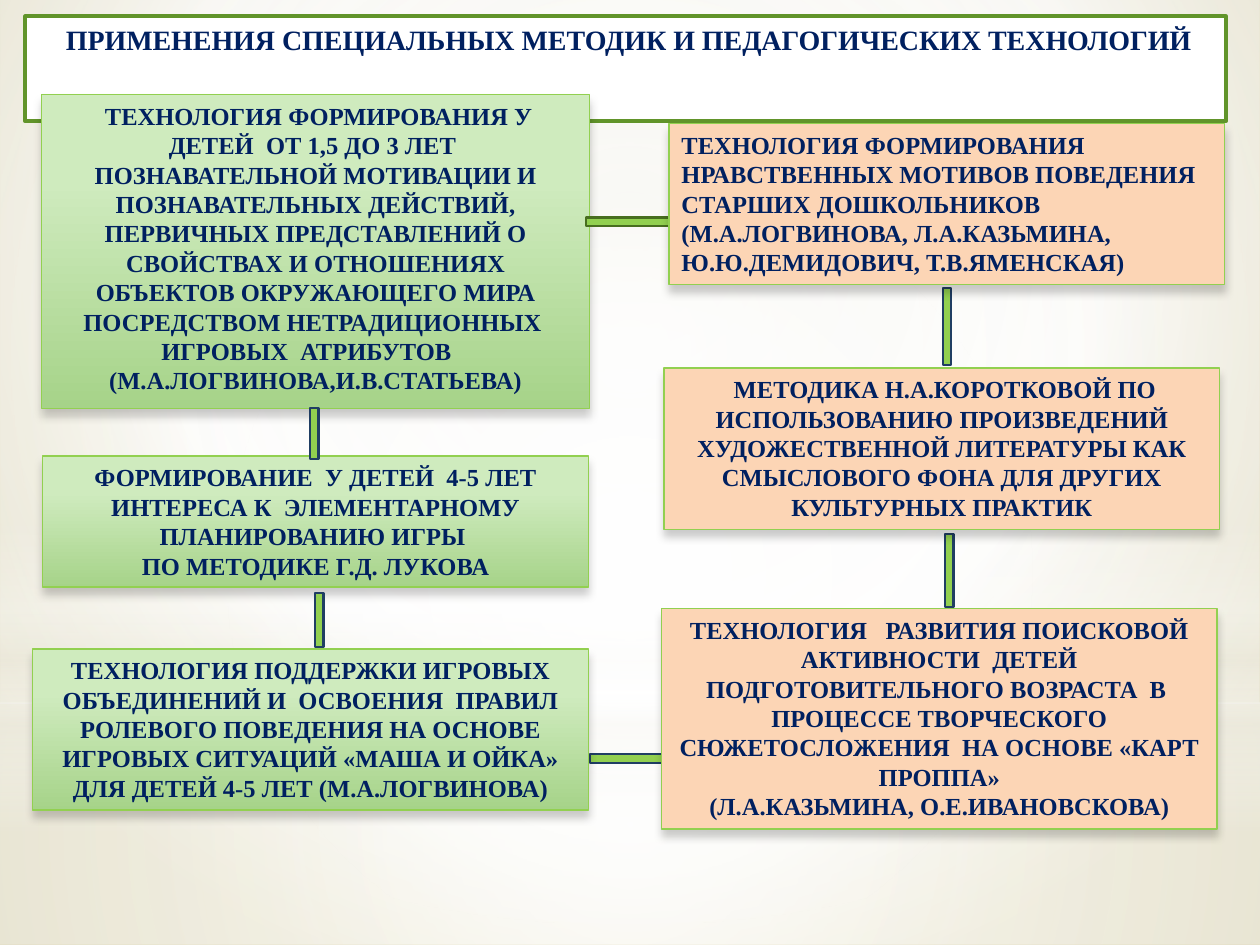
from lxml import etree
from pptx import Presentation
from pptx.dml.color import RGBColor
from pptx.enum import shapes, text
from pptx.oxml.ns import qn
from pptx.util import Inches, Pt

FONT = "Times New Roman"
NAVY = RGBColor(0x00, 0x20, 0x60)
WHITE = RGBColor(0xFF, 0xFF, 0xFF)
CREAM = RGBColor(0xEE, 0xEC, 0xE1)
SAND = RGBColor(0xE7, 0xE4, 0xD4)
KHAKI = RGBColor(0xD5, 0xCC, 0x9F)
LIME = RGBColor(0x92, 0xD0, 0x50)
PALE_GREEN = RGBColor(0xCF, 0xEB, 0xBE)
MID_GREEN = RGBColor(0xA6, 0xD3, 0x89)
PEACH = RGBColor(0xFC, 0xD5, 0xB5)
TITLE_GREEN = RGBColor(0x61, 0x94, 0x2A)
DARK_GREEN = RGBColor(0x48, 0x6E, 0x1F)
DARK_BLUE = RGBColor(0x20, 0x3E, 0x63)
BLACK = RGBColor(0, 0, 0)

CENTER, LEFT = text.PP_ALIGN.CENTER, text.PP_ALIGN.LEFT
RECT, OVAL = shapes.MSO_SHAPE.RECTANGLE, shapes.MSO_SHAPE.OVAL
MIDDLE = (50, 50, 50, 50)
GREEN_FADE = [(28, PALE_GREEN, 100), (100, MID_GREEN, 100)]


def sub(parent, tag, **attrs):
    return etree.SubElement(parent, qn(tag), {k: str(v) for k, v in attrs.items()})


def add_color(parent, color, opacity):
    clr = sub(parent, "a:srgbClr", val=color)
    if opacity < 100:
        sub(clr, "a:alpha", val=opacity * 1000)


def set_gradient(props, stops, focus=None):
    """Replace a solid fill by a radial (with focus) or downward gradient."""
    grad = etree.Element(qn("a:gradFill"), rotWithShape="1")
    gs_lst = sub(grad, "a:gsLst")
    for pos, color, opacity in stops:
        add_color(sub(gs_lst, "a:gs", pos=pos * 1000), color, opacity)
    if focus:
        path = sub(grad, "a:path", path="circle")
        sub(path, "a:fillToRect", **{k: v * 1000 for k, v in zip("ltrb", focus)})
    else:
        sub(grad, "a:lin", ang=5400000, scaled=0)
    props.replace(props.find(qn("a:solidFill")), grad)


def add_shape(s, kind, at, fill, line=None, width=0.75, focus=None):
    sp = s.shapes.add_shape(kind, *map(Inches, at))
    sp.shadow.inherit = False
    sp.fill.solid()
    if isinstance(fill, list):
        set_gradient(sp.element.spPr, fill, focus)
    else:
        sp.fill.fore_color.rgb = fill
    if line is None:
        sp.line.fill.background()
    else:
        sp.line.color.rgb = line
        sp.line.width = Pt(width)
    return sp


def format_run(r, size):
    r.font.name, r.font.size, r.font.bold = FONT, Pt(size), True
    r.font.color.rgb = NAVY


def add_box(s, at, fill, paragraphs, align=CENTER):
    sp = add_shape(s, RECT, at, fill, LIME)
    shadow = sub(sp.element.spPr.find(qn("a:effectLst")), "a:outerShdw",
                 blurRad=Pt(5), dist=Pt(4), dir=5400000, rotWithShape=0)
    add_color(shadow, BLACK, 20)
    tf = sp.text_frame
    tf.word_wrap = True
    tf.vertical_anchor = text.MSO_ANCHOR.TOP
    tf.auto_size = text.MSO_AUTO_SIZE.SHAPE_TO_FIT_TEXT
    tf.text = "\n".join(paragraphs)
    for p in tf.paragraphs:
        p.alignment = align
        for r in p.runs:
            format_run(r, 14)


def add_bar(s, at, line=DARK_BLUE, vertical=True):
    sp = add_shape(s, shapes.MSO_SHAPE.MATH_MINUS, at, LIME, line, 1.25)
    sp.rotation = 270 if vertical else 0


def add_backdrop(s):
    s.background.fill.solid()
    set_gradient(s.element.find(".//" + qn("p:bgPr")),
                 [(0, SAND, 100), (60, WHITE, 100), (100, KHAKI, 100)], (20, 10, 20, 60))
    add_shape(s, RECT, (0, 5.58, 10, 1.92),
              [(0, WHITE, 91), (37, WHITE, 76), (100, CREAM, 79)], focus=MIDDLE)
    add_shape(s, RECT, (0, 0, 10, 5.58),
              [(0, WHITE, 89), (48, WHITE, 62), (100, CREAM, 79)], focus=MIDDLE)
    add_shape(s, RECT, (0, 4.12, 10, 2.5),
              [(0, WHITE, 0), (29, WHITE, 30), (45, CREAM, 40),
               (55, WHITE, 26), (65, CREAM, 60), (100, WHITE, 0)])
    add_shape(s, OVAL, (0, 1.75, 10, 5.58), [(0, WHITE, 100), (56, WHITE, 0)], focus=MIDDLE)


def set_title(s, title):
    sp = s.shapes.title
    sp.left, sp.top, sp.width, sp.height = map(Inches, (0.2, 0.13, 9.53, 0.37))
    sp.fill.solid()
    sp.fill.fore_color.rgb = WHITE
    sp.line.color.rgb = TITLE_GREEN
    sp.line.width = Pt(2.25)
    tf = sp.text_frame
    tf.text = title
    tf.word_wrap = True
    tf.vertical_anchor = text.MSO_ANCHOR.TOP
    tf.auto_size = text.MSO_AUTO_SIZE.SHAPE_TO_FIT_TEXT
    p = tf.paragraphs[0]
    p.alignment = CENTER
    format_run(p.runs[0], 16)
    # Bring the title in front of the backdrop
    sp.element.getparent().append(sp.element)


def main():
    prs = Presentation()
    prs.slide_width, prs.slide_height = Inches(10), Inches(7.5)
    s = prs.slides.add_slide(prs.slide_layouts[5])
    add_backdrop(s)
    set_title(s, " ПРИМЕНЕНИЯ СПЕЦИАЛЬНЫХ МЕТОДИК И ПЕДАГОГИЧЕСКИХ ТЕХНОЛОГИЙ")

    # Left column, upper boxes
    add_box(s, (0.33, 0.75, 4.35, 2.49), GREEN_FADE, [
        " ТЕХНОЛОГИЯ ФОРМИРОВАНИЯ У ДЕТЕЙ  ОТ 1,5 ДО 3 ЛЕТ  ПОЗНАВАТЕЛЬНОЙ МОТИВАЦИИ И "
        "ПОЗНАВАТЕЛЬНЫХ ДЕЙСТВИЙ, ПЕРВИЧНЫХ ПРЕДСТАВЛЕНИЙ О СВОЙСТВАХ И ОТНОШЕНИЯХ "
        "ОБЪЕКТОВ ОКРУЖАЮЩЕГО МИРА ПОСРЕДСТВОМ НЕТРАДИЦИОННЫХ  ИГРОВЫХ  АТРИБУТОВ    "
        "(М.А.ЛОГВИНОВА,И.В.СТАТЬЕВА)"])
    add_box(s, (0.34, 3.62, 4.33, 1.04), GREEN_FADE, [
        "ФОРМИРОВАНИЕ  У ДЕТЕЙ  4-5 ЛЕТ ИНТЕРЕСА К  ЭЛЕМЕНТАРНОМУ ПЛАНИРОВАНИЮ ИГРЫ ",
        "ПО МЕТОДИКЕ Г.Д. ЛУКОВА"])

    # Bars between the boxes
    add_bar(s, (4.53, 1.62, 0.94, 0.28), DARK_GREEN, vertical=False)
    add_bar(s, (4.57, 5.88, 0.83, 0.28), vertical=False)
    for at in ((2.22, 3.3, 0.55, 0.28), (2.24, 4.78, 0.59, 0.28),
               (7.14, 4.39, 0.79, 0.28), (7.1, 2.45, 0.83, 0.28)):
        add_bar(s, at)

    # Right column, bottom to top
    add_box(s, (5.25, 4.83, 4.41, 1.75), PEACH, [
        "ТЕХНОЛОГИЯ   РАЗВИТИЯ ПОИСКОВОЙ АКТИВНОСТИ  ДЕТЕЙ ПОДГОТОВИТЕЛЬНОГО ВОЗРАСТА  В  "
        "ПРОЦЕССЕ ТВОРЧЕСКОГО СЮЖЕТОСЛОЖЕНИЯ  НА ОСНОВЕ «КАРТ ПРОППА»",
        "(Л.А.КАЗЬМИНА, О.Е.ИВАНОВСКОВА)"])
    add_box(s, (5.27, 2.92, 4.41, 1.28), PEACH, [
        " МЕТОДИКА Н.А.КОРОТКОВОЙ ПО ИСПОЛЬЗОВАНИЮ ПРОИЗВЕДЕНИЙ ХУДОЖЕСТВЕННОЙ "
        "ЛИТЕРАТУРЫ КАК СМЫСЛОВОГО ФОНА ДЛЯ ДРУГИХ КУЛЬТУРНЫХ ПРАКТИК"])
    add_box(s, (5.31, 0.98, 4.41, 1.28), PEACH, [
        "ТЕХНОЛОГИЯ ФОРМИРОВАНИЯ НРАВСТВЕННЫХ МОТИВОВ ПОВЕДЕНИЯ СТАРШИХ ДОШКОЛЬНИКОВ  "
        "(М.А.ЛОГВИНОВА, Л.А.КАЗЬМИНА, Ю.Ю.ДЕМИДОВИЧ, Т.В.ЯМЕНСКАЯ)"], LEFT)

    # Left column, bottom box
    add_box(s, (0.26, 5.15, 4.41, 1.28), GREEN_FADE, [
        "ТЕХНОЛОГИЯ ПОДДЕРЖКИ ИГРОВЫХ ОБЪЕДИНЕНИЙ И  ОСВОЕНИЯ  ПРАВИЛ РОЛЕВОГО ПОВЕДЕНИЯ "
        "НА ОСНОВЕ ИГРОВЫХ СИТУАЦИЙ «МАША И ОЙКА» ДЛЯ ДЕТЕЙ 4-5 ЛЕТ (М.А.ЛОГВИНОВА)"])

    prs.save("out.pptx")


if __name__ == "__main__":
    main()
